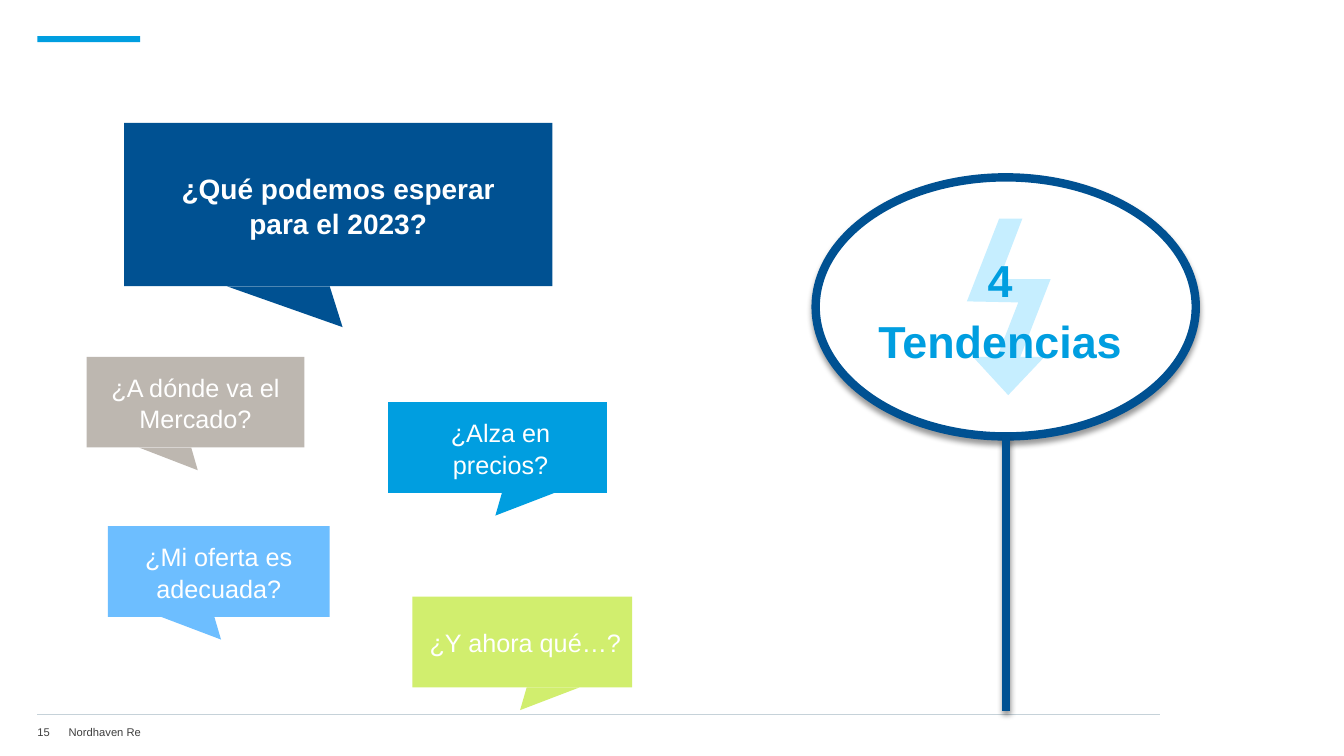
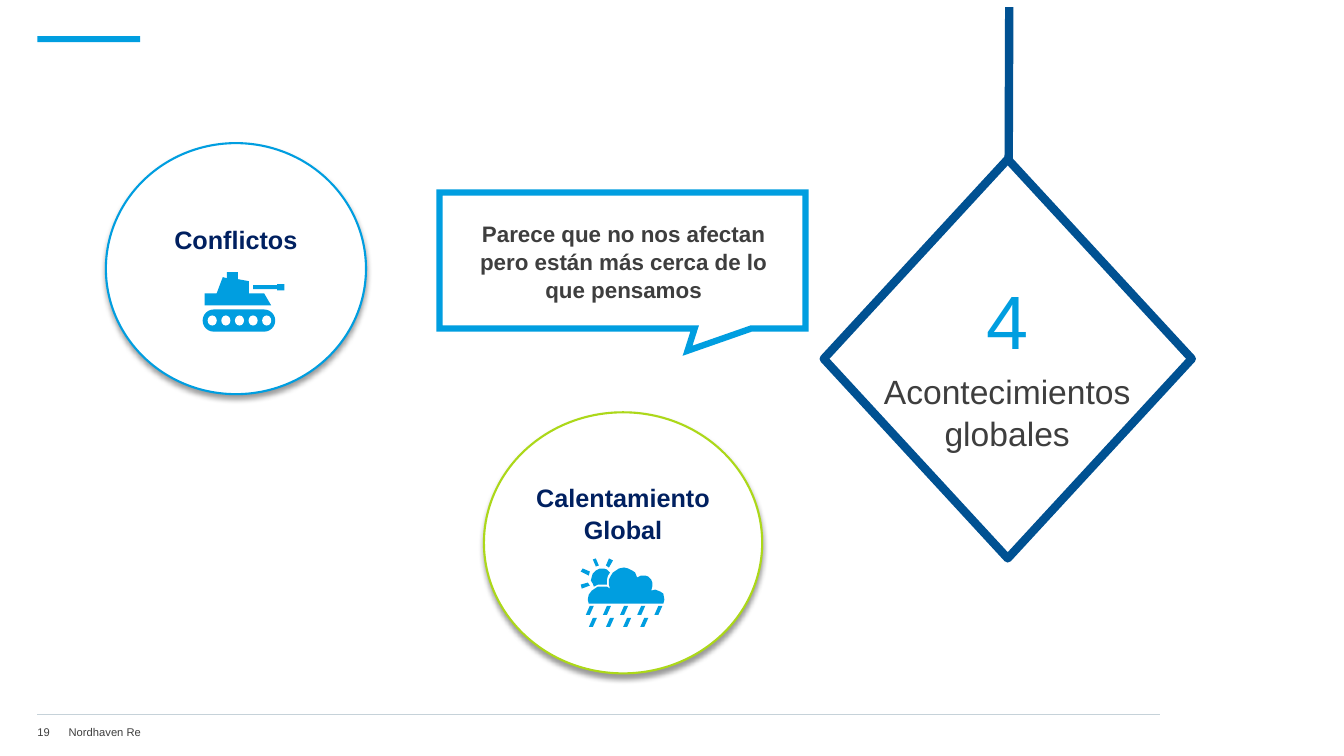
import pptx
import pptx.util
import pptx.dml.color
import pptx.enum.shapes
import pptx.enum.text
import pptx.oxml.ns
from lxml import etree

inch = pptx.util.Inches
rgb = pptx.dml.color.RGBColor.from_string
qn = pptx.oxml.ns.qn
KIND = pptx.enum.shapes.MSO_SHAPE
ANCHOR = pptx.enum.text.MSO_ANCHOR
ALIGN = pptx.enum.text.PP_ALIGN

HUE = {
    "white": "FFFFFF", "black": "000000", "text": "3E3E3E", "rule": "C6D2D9",
    "navy": "002060", "dark": "005192", "blue": "009EE0", "sky": "6DBEFF",
    "pale": "C6EEFF", "sand": "BDB7B0", "lime": "D1EE6E", "green": "ACD819",
}
FONT = "Arial"


def draw(slide, kind, spot, fill=None, line=None, width=1, shade=False):
    """Draw a preset in a box, a "line" between two ends or a "path" through points."""
    if kind == "line":
        ends = map(inch, spot)
        shape = slide.shapes.add_connector(pptx.enum.shapes.MSO_CONNECTOR.STRAIGHT, *ends)
    elif kind == "path":
        dots = [(inch(x), inch(y)) for x, y in spot]
        path = slide.shapes.build_freeform(*dots[0])
        path.add_line_segments(dots[1:], close=True)
        shape = path.convert_to_shape()
    else:
        shape = slide.shapes.add_shape(kind, *map(inch, spot))
    if fill:
        shape.fill.solid()
        shape.fill.fore_color.rgb = rgb(HUE[fill])
    elif kind != "line":
        shape.fill.background()
    if line:
        shape.line.color.rgb = rgb(HUE[line])
        shape.line.width = pptx.util.Pt(width)
    else:
        shape.line.fill.background()
    effect = etree.SubElement(shape._element.spPr, qn("a:effectLst"))
    if shade:
        outer = etree.SubElement(effect, qn("a:outerShdw"), blurRad="50800", dist="38100",
                                 dir="5400000", algn="t", rotWithShape="0")
        tone = etree.SubElement(outer, qn("a:srgbClr"), val=HUE["black"])
        etree.SubElement(tone, qn("a:alpha"), val="40000")
    return shape


def write(shape, parts, inset=(0, 0, 0, 0), anchor=ANCHOR.MIDDLE, align=ALIGN.CENTER):
    """Fill a shape with paragraphs, each given as text, size, colour and bold."""
    frame = shape.text_frame
    frame.word_wrap = True
    frame.vertical_anchor = anchor
    (frame.margin_left, frame.margin_top,
     frame.margin_right, frame.margin_bottom) = map(inch, inset)
    for i, (text, size, hue, bold) in enumerate(parts):
        para = frame.add_paragraph() if i else frame.paragraphs[0]
        para.alignment = align
        para.line_spacing = 1.05
        para.space_before = pptx.util.Pt(3 if i else 0)
        for j, piece in enumerate(text.split("\n")):
            if j:
                para.add_line_break()
            run = para.add_run()
            run.text = piece
            run.font.name = FONT
            run.font.size = pptx.util.Pt(size)
            run.font.bold = bold
            run.font.color.rgb = rgb(HUE[hue])


deck = pptx.Presentation()
deck.slide_width = inch(13.33)
deck.slide_height = inch(7.5)

# Shared frame: accent bar, footer rule, page number and company
pages = []
for number in ("15", "19"):
    slide = deck.slides.add_slide(deck.slide_layouts[6])
    draw(slide, "line", (0.37, 7.09, 11.51, 7.09), line="rule", width=0.75)
    for left, width, text in ((0.37, 0.31, number), (0.68, 10.78, "Nordhaven Re")):
        label = slide.shapes.add_textbox(*map(inch, (left, 7.14, width, 0.24)))
        write(label, [(text, 8, "text", False)], align=ALIGN.LEFT)
    draw(slide, KIND.RECTANGLE, (0.37, 0.36, 1.02, 0.06), "blue")
    pages.append(slide)
trends, events = pages

# Slide 1: speech bubbles; side is 1 for a tail at the left, -1 at the right
bubbles = [
    ((1.23, 1.22, 4.25, 1.62), "dark", 1, 20, "¿Qué podemos esperar para el 2023?"),
    ((0.86, 3.54, 2.16, 0.9), "sand", 1, 18, "¿A dónde va el Mercado?"),
    ((3.85, 3.99, 2.17, 0.9), "blue", -1, 18, "¿Alza en\nprecios?"),
    ((1.07, 5.22, 2.2, 0.9), "sky", 1, 18, "¿Mi oferta es adecuada?"),
    ((4.09, 5.92, 2.18, 0.9), "lime", -1, 18, "¿Y ahora qué…?"),
]
for box, hue, side, size, text in bubbles:
    left, top, width, height = box
    bubble = draw(trends, KIND.RECTANGLE, box, hue)
    main = size == 20
    pad = 0.25 if main else 0.03
    shift = 0.06 if side < 0 else 0
    write(bubble, [(text, size, "white", main)], (pad + shift, 0, pad, 0))
    start = left if side > 0 else left + width
    foot = top + height
    tail = ((0.24, 0), (0.48, 0), (0.51, 0.25))
    draw(trends, "path", [(start + side * x * width, foot + y * height) for x, y in tail], hue)

# Slide 1: signpost
draw(trends, KIND.OVAL, (8.09, 1.76, 3.77, 2.57), "white", "dark", 6, True)
bolt = [(10.42, 2.77), (9.91, 2.77), (10.14, 2.17), (9.91, 2.17), (9.59, 2.99), (10.1, 3),
        (9.89, 3.54), (9.65, 3.54), (10, 3.92), (10.36, 3.54), (10.12, 3.54)]
draw(trends, "path", bolt, "pale")
sign = trends.shapes.add_textbox(*map(inch, (8.68, 2.48, 2.48, 1.13)))
write(sign, [("4", 32, "blue", True), ("Tendencias", 32, "blue", True)], anchor=ANCHOR.TOP)
draw(trends, "line", (9.98, 4.33, 9.98, 7.05), line="dark", width=6, shade=True)

# Slide 2: hanging diamond
draw(events, "line", (10.01, 0.07, 9.99, 5.54), line="dark", width=6)
draw(events, KIND.FLOWCHART_DECISION, (8.17, 1.58, 3.65, 3.96), "white", "dark", 6)
sign = events.shapes.add_textbox(*map(inch, (8.71, 2.67, 2.56, 1.22)))
write(sign, [("4", 54, "blue", False), ("Acontecimientos globales", 24, "text", False)],
      anchor=ANCHOR.TOP)

# Slide 2: circles, with room for an icon under the text
for box, hue, text in (((1.05, 1.42, 2.58, 2.49), "blue", "Conflictos"),
                       ((4.8, 4.09, 2.76, 2.59), "green", "Calentamiento Global")):
    circle = draw(events, KIND.OVAL, box, "white", hue, 1.5, True)
    write(circle, [(text, 18, "navy", True)], (0.05, 0.05, 0.05, 0.65))

# Slide 2: outlined callout with sharp corners
edge = [(7.99, 1.91), (4.36, 1.91), (4.36, 3.26), (6.89, 3.26), (6.82, 3.48),
        (7.45, 3.26), (7.99, 3.26)]
callout = draw(events, "path", edge, line="blue", width=4.5)
etree.SubElement(callout._element.spPr.find(qn("a:ln")), qn("a:miter"), lim="800000")
write(callout, [("Parece que no nos afectan pero están más cerca de lo que pensamos",
                 16, "text", True)], (0.3, 0.26, 0.28, 0.24), ANCHOR.TOP)

# Slide 2: tank
track = draw(events, KIND.ROUNDED_RECTANGLE, (2.01, 3.07, 0.72, 0.22), "blue")
track.adjustments[0] = 0.5
for i in range(5):
    draw(events, KIND.OVAL, (2.06 + 0.135 * i, 3.13, 0.09, 0.1), "white")
barrel = [(2.51, 2.83), (2.75, 2.83), (2.75, 2.82), (2.82, 2.82), (2.82, 2.88),
          (2.75, 2.88), (2.75, 2.87), (2.51, 2.87)]
hull = [(2.62, 2.91), (2.47, 2.91), (2.47, 2.79), (2.36, 2.77), (2.36, 2.7), (2.25, 2.7),
        (2.25, 2.76), (2.21, 2.75), (2.15, 2.91), (2.03, 2.91), (2.03, 3.03), (2.69, 3.03)]

# Slide 2: cloud, sun, rays and rain
cloud = [(6.5, 5.85), (6.46, 5.86), (6.47, 5.82), (6.47, 5.78), (6.46, 5.75), (6.43, 5.72),
         (6.4, 5.71), (6.36, 5.71), (6.32, 5.73), (6.3, 5.68), (6.27, 5.66), (6.23, 5.64),
         (6.19, 5.63), (6.14, 5.64), (6.11, 5.66), (6.08, 5.68), (6.06, 5.71), (6.04, 5.75),
         (6.04, 5.8), (6.05, 5.84), (6.02, 5.82), (5.97, 5.82), (5.93, 5.82), (5.9, 5.84),
         (5.87, 5.86), (5.84, 5.9), (5.83, 5.95), (5.84, 5.99), (6.58, 5.99), (6.59, 5.95),
         (6.58, 5.89), (6.55, 5.87)]
sun = [(5.89, 5.82), (5.93, 5.8), (5.97, 5.8), (6.02, 5.8), (6.02, 5.75), (6.03, 5.71),
       (6.05, 5.68), (6.02, 5.65), (5.99, 5.64), (5.95, 5.64), (5.91, 5.66), (5.88, 5.69),
       (5.87, 5.72), (5.86, 5.76), (5.88, 5.79)]
rays = [
    [(5.84, 5.71), (5.76, 5.67), (5.78, 5.64), (5.85, 5.67)],
    [(6.04, 5.63), (6.01, 5.61), (6.04, 5.54), (6.08, 5.56)],
    [(5.91, 5.62), (5.88, 5.55), (5.91, 5.54), (5.94, 5.61)],
    [(5.77, 5.84), (5.76, 5.8), (5.83, 5.78), (5.85, 5.81)],
]
drops = []
for left, top, count in ((5.81, 6.01, 5), (5.84, 6.13, 4)):
    for i in range(count):
        x = left + 0.17 * i
        drops.append([(x + 0.04, top), (x, top + 0.09), (x + 0.04, top + 0.09), (x + 0.08, top)])
for part in [barrel, hull, cloud, sun] + rays + drops:
    draw(events, "path", part, "blue")

deck.save("out.pptx")
